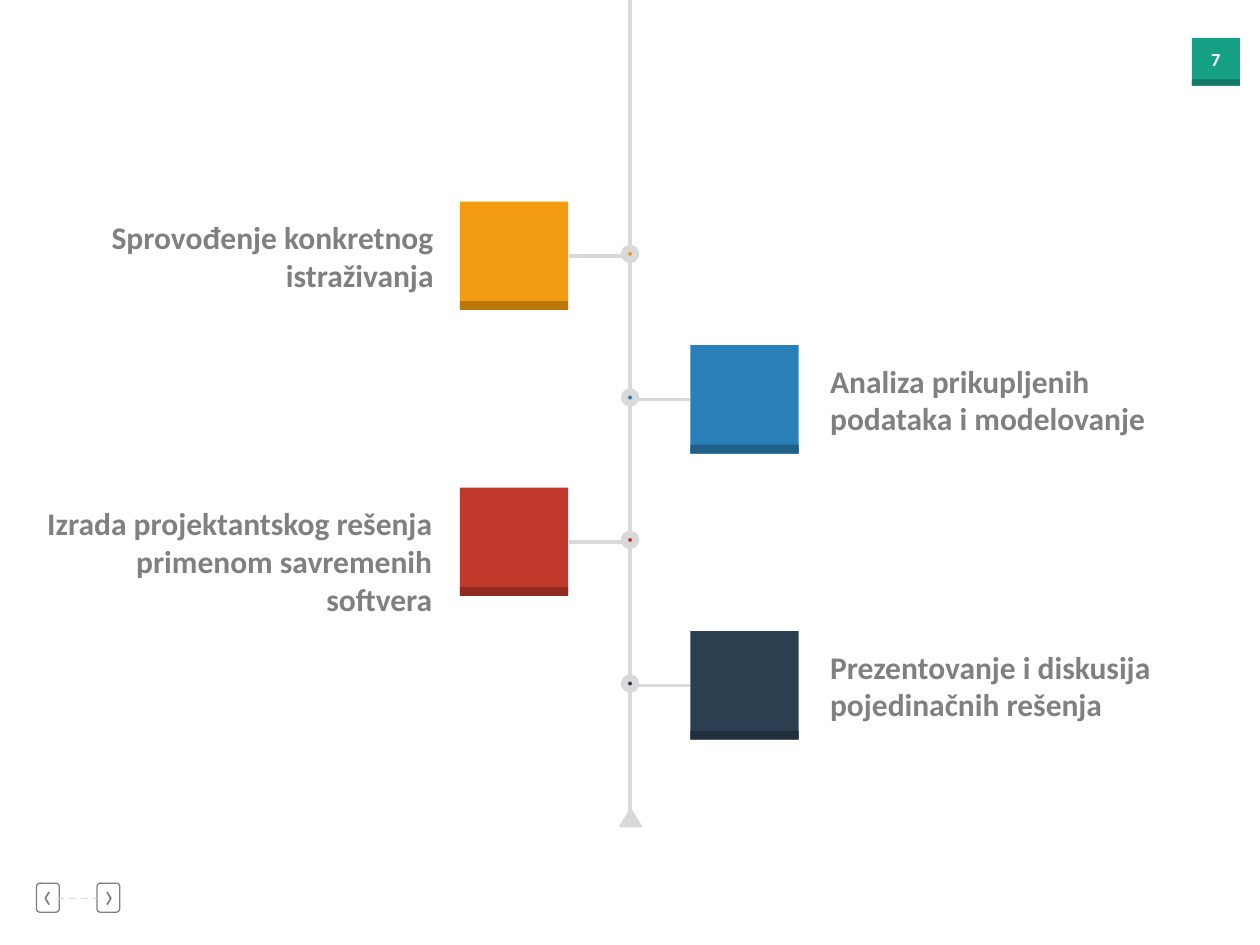
"""Build a vertical timeline slide with four project steps."""
from dataclasses import dataclass

from lxml.etree import SubElement
from pptx import Presentation
from pptx.dml.color import RGBColor
from pptx.enum.dml import MSO_LINE
from pptx.enum.shapes import MSO_CONNECTOR, MSO_SHAPE
from pptx.enum.text import MSO_AUTO_SIZE, PP_ALIGN
from pptx.oxml.ns import qn
from pptx.shapes.autoshape import Shape
from pptx.slide import Slide
from pptx.util import Inches, Pt


@dataclass(frozen=True)
class Theme:
    font: str = "Calibri"
    body: float = 18
    small: float = 10.5
    rail: str = "D9D9D9"
    gray: str = "808080"
    white: str = "FFFFFF"
    badge: str = "16A085"
    edge: str = "107864"


@dataclass(frozen=True)
class Step:
    text: str
    top: float
    left: float
    width: float
    fill: str
    shade: str
    is_left: bool


@dataclass(frozen=True)
class Button:
    left: float
    tip: float
    tail: float


THEME = Theme()
AXIS, TILE, DOT = 5, 0.86, 0.09
STEPS = (
    Step("Sprovođenje konkretnog istraživanja", 1.6, 0.5, 3.04, "F39C12", "BA7609", True),
    Step("Analiza prikupljenih podataka i modelovanje", 2.74, 6.49, 3.09, "2980B9", "1F608B", False),
    Step("Izrada projektantskog rešenja primenom savremenih softvera", 3.87, 0.17, 3.36,
         "C0392B", "902B20", True),
    Step("Prezentovanje i diskusija pojedinačnih rešenja", 5.01, 6.49, 3.17, "2C3F50", "212F3C", False),
)
BUTTONS = (Button(0.29, 0.36, 0.39), Button(0.77, 0.88, 0.85))


def paint(shape: Shape, fill: str | None, line: str | None = None, weight: float = 1) -> None:
    """Set the fill and outline of a shape and drop its shadow."""
    shape.shadow.inherit = False
    if fill:
        shape.fill.solid()
        shape.fill.fore_color.rgb = RGBColor.from_string(fill)
    else:
        shape.fill.background()
    if line:
        shape.line.color.rgb = RGBColor.from_string(line)
        shape.line.width = Pt(weight)
    else:
        shape.line.fill.background()


def add_box(slide: Slide, kind: MSO_SHAPE, left: float, top: float, width: float, height: float,
            fill: str | None, line: str | None = None, weight: float = 1) -> Shape:
    """Add a painted preset shape."""
    shape = slide.shapes.add_shape(kind, Inches(left), Inches(top), Inches(width), Inches(height))
    paint(shape, fill, line, weight)
    return shape


def add_line(slide: Slide, left: float, top: float, right: float, base: float,
             weight: float = 2, dash: bool = False) -> None:
    """Add a straight rail line."""
    line = slide.shapes.add_connector(
        MSO_CONNECTOR.STRAIGHT, Inches(left), Inches(top), Inches(right), Inches(base))
    line.line.color.rgb = RGBColor.from_string(THEME.rail)
    line.line.width = Pt(weight)
    if dash:
        line.line.dash_style = MSO_LINE.DASH
    SubElement(line._element.spPr, qn("a:effectLst"))


def add_text(slide: Slide, text: str, left: float, top: float, width: float, height: float,
             size: float, color: str, align: PP_ALIGN, wrap: bool = True) -> None:
    """Add a bold text box with one run."""
    box = slide.shapes.add_textbox(Inches(left), Inches(top), Inches(width), Inches(height))
    frame = box.text_frame
    frame.word_wrap = wrap
    frame.auto_size = MSO_AUTO_SIZE.SHAPE_TO_FIT_TEXT
    para = frame.paragraphs[0]
    para.alignment = align
    run = para.add_run()
    run.text = text
    run.font.name = THEME.font
    run.font.size = Pt(size)
    run.font.bold = True
    run.font.color.rgb = RGBColor.from_string(color)


def add_badge(slide: Slide) -> None:
    """Add the page number badge."""
    add_box(slide, MSO_SHAPE.RECTANGLE, 9.46, 0.3, 0.38, 0.38, THEME.badge)
    add_box(slide, MSO_SHAPE.RECTANGLE, 9.46, 0.63, 0.38, 0.05, THEME.edge)
    add_text(slide, "7", 9.46, 0.33, 0.38, 0.28, THEME.small, THEME.white, PP_ALIGN.CENTER, False)


def add_button(slide: Slide, button: Button) -> None:
    """Add a rounded button with a chevron."""
    frame = add_box(slide, MSO_SHAPE.ROUNDED_RECTANGLE, button.left, 7.01, 0.18, 0.23,
                    None, THEME.gray, 0.75)
    frame.adjustments[0] = 0.14
    pen = slide.shapes.build_freeform(Inches(button.tail), Inches(7.08))
    pen.add_line_segments(
        [(Inches(button.tip), Inches(7.13)), (Inches(button.tail), Inches(7.18))], close=False)
    paint(pen.convert_to_shape(), None, THEME.gray, 1)


def add_step(slide: Slide, step: Step) -> None:
    """Add a tile, its axis dot, link and label."""
    tile = 3.65 if step.is_left else 5.48
    start, end = (4.52, 4.95) if step.is_left else (5.05, 5.48)
    add_box(slide, MSO_SHAPE.OVAL, AXIS - DOT / 2, step.top + 0.37, DOT, DOT, step.fill, THEME.rail, 4)
    add_line(slide, start, step.top + 0.43, end, step.top + 0.43)
    add_box(slide, MSO_SHAPE.RECTANGLE, tile, step.top, TILE, TILE, step.fill)
    add_box(slide, MSO_SHAPE.RECTANGLE, tile, step.top + 0.79, TILE, 0.07, step.shade)
    align = PP_ALIGN.RIGHT if step.is_left else PP_ALIGN.LEFT
    add_text(slide, step.text, step.left, step.top + 0.08, step.width, 0.71,
             THEME.body, THEME.gray, align)


def main() -> None:
    """Build and save the slide."""
    deck = Presentation()
    deck.slide_width, deck.slide_height = Inches(10), Inches(7.5)
    slide = deck.slides.add_slide(deck.slide_layouts[6])
    add_badge(slide)
    for button in BUTTONS:
        add_button(slide, button)
    add_line(slide, 0.45, 7.13, 0.77, 7.13, 1, True)
    start = 0
    for step in STEPS:
        add_line(slide, AXIS, start, AXIS, step.top + 0.36)
        add_step(slide, step)
        start = step.top + 0.47
    add_line(slide, AXIS, start, AXIS, 6.5)
    add_box(slide, MSO_SHAPE.ISOSCELES_TRIANGLE, 4.92, 6.42, 0.17, 0.14, THEME.rail, THEME.rail)
    deck.save("out.pptx")


if __name__ == "__main__":
    main()
